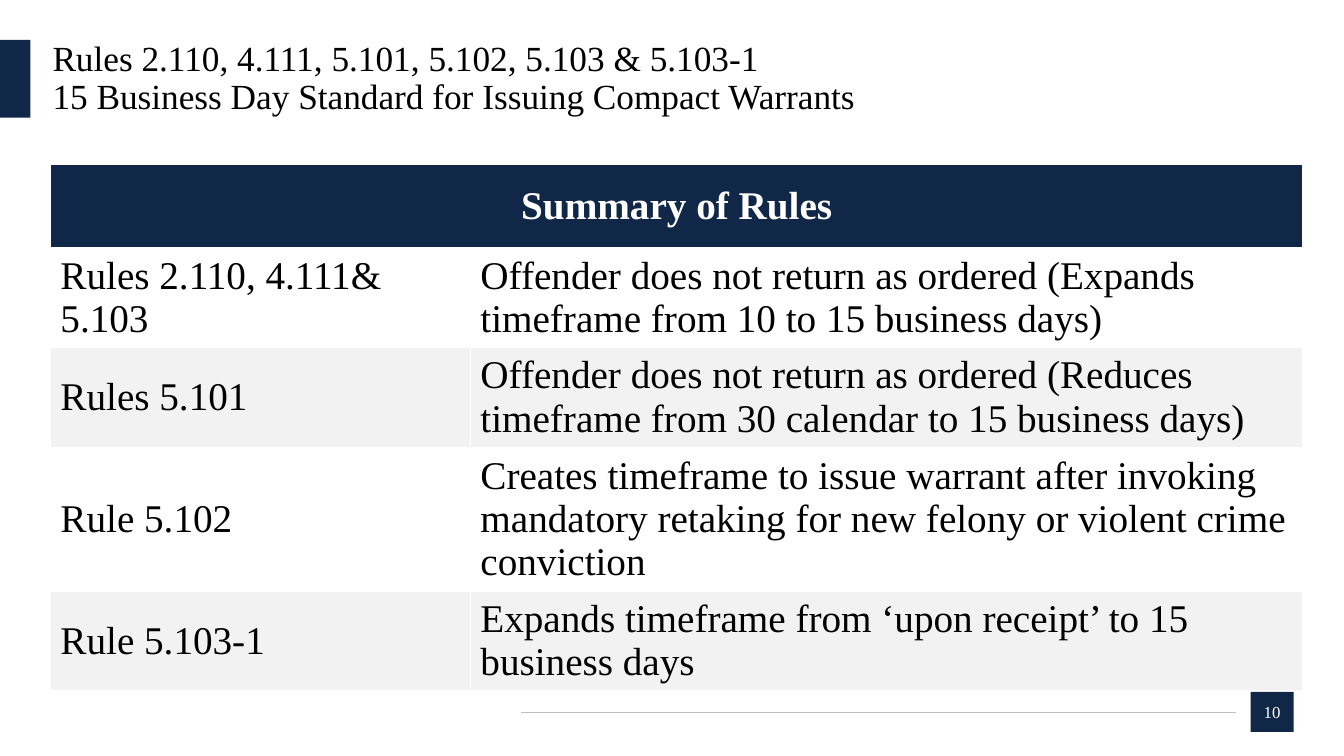
from lxml import etree
from pptx import Presentation
from pptx.dml.color import RGBColor
from pptx.enum.shapes import MSO_CONNECTOR, MSO_SHAPE
from pptx.enum.text import MSO_ANCHOR, MSO_AUTO_SIZE, PP_ALIGN
from pptx.oxml.ns import qn
from pptx.util import Emu, Pt

RECT = MSO_SHAPE.RECTANGLE
LINE = MSO_CONNECTOR.STRAIGHT
MIDDLE = MSO_ANCHOR.MIDDLE
LEFT = PP_ALIGN.LEFT
CENTER = PP_ALIGN.CENTER
FIXED = MSO_AUTO_SIZE.NONE

FONT = "Times New Roman"
NAVY = "102747"
WHITE = "FFFFFF"
BLACK = "000000"
GRAY = "F2F2F2"
RULE = "BFBFBF"

TITLE = (
    "Rules 2.110, 4.111, 5.101, 5.102, 5.103 & 5.103-1\v"
    "15 Business Day Standard for Issuing Compact Warrants"
)
HEAD = "Summary of Rules"
RULES = [
    ("Rules 2.110, 4.111& 5.103",
     "Offender does not return as ordered (Expands timeframe from 10 to 15 business days)"),
    ("Rules 5.101",
     "Offender does not return as ordered (Reduces timeframe from 30 calendar to 15 business days)"),
    ("Rule 5.102",
     "Creates timeframe to issue warrant after invoking mandatory retaking "
     "for new felony or violent crime conviction"),
    ("Rule 5.103-1",
     "Expands timeframe from ‘upon receipt’ to 15 business days"),
]
COLS = [400, 793]
ROWS = [79, 95, 95, 137, 95]


def px(n):
    return Emu(n * 9525)


def color(code):
    return RGBColor.from_string(code)


def style(frame, size, code, align=LEFT, bold=False):
    for para in frame.paragraphs:
        para.alignment = align
        for run in para.runs:
            run.font.name = FONT
            run.font.size = Pt(size)
            run.font.bold = bold
            run.font.color.rgb = color(code)


def inset(frame):
    frame.margin_left = frame.margin_right = 0
    frame.margin_top = frame.margin_bottom = 0
    frame.vertical_anchor = MIDDLE


def add_title(slide):
    title = slide.shapes.title
    title.left, title.top, title.width, title.height = map(px, (50, 38, 1182, 74))
    frame = title.text_frame
    frame.text = TITLE
    frame.auto_size = FIXED
    inset(frame)
    frame.paragraphs[0].line_spacing = 0.9
    style(frame, 25.2, BLACK)


def add_box(slide, x, y, w, h):
    box = slide.shapes.add_shape(RECT, *map(px, (x, y, w, h)))
    box.shadow.inherit = False
    box.fill.solid()
    box.fill.fore_color.rgb = color(NAVY)
    box.line.fill.background()
    return box


def add_rule(slide, x, y, end):
    rule = slide.shapes.add_connector(LINE, px(x), px(y), px(end), px(y))
    rule.line.color.rgb = color(RULE)
    rule.line.width = Pt(0.5)
    etree.SubElement(rule._element.spPr, qn("a:effectLst"))


def fill_cell(cell, text, back, code=BLACK, align=LEFT, bold=False):
    cell.text = text
    cell.vertical_anchor = MIDDLE
    cell.fill.solid()
    cell.fill.fore_color.rgb = color(back)
    style(cell.text_frame, 28, code, align, bold)


def add_grid(slide):
    size = (48, 157, sum(COLS), sum(ROWS))
    grid = slide.shapes.add_table(len(ROWS), len(COLS), *map(px, size)).table
    for col, width in zip(grid.columns, COLS):
        col.width = px(width)
    for row, height in zip(grid.rows, ROWS):
        row.height = px(height)
    head = grid.cell(0, 0)
    head.merge(grid.cell(0, 1))
    fill_cell(head, HEAD, NAVY, WHITE, CENTER, True)
    for r, texts in enumerate(RULES, 1):
        for c, text in enumerate(texts):
            fill_cell(grid.cell(r, c), text, WHITE if r % 2 else GRAY)


def add_page(slide, text):
    frame = add_box(slide, 1191, 659, 41, 38).text_frame
    frame.text = text
    inset(frame)
    style(frame, 12, WHITE, CENTER)


def main():
    prs = Presentation()
    prs.slide_width, prs.slide_height = px(1280), px(720)
    slide = prs.slides.add_slide(prs.slide_layouts[5])
    add_title(slide)
    add_box(slide, 0, 38, 29, 74)
    add_rule(slide, 496, 678, 1177)
    add_grid(slide)
    add_page(slide, "10")
    prs.save("out.pptx")


if __name__ == "__main__":
    main()
